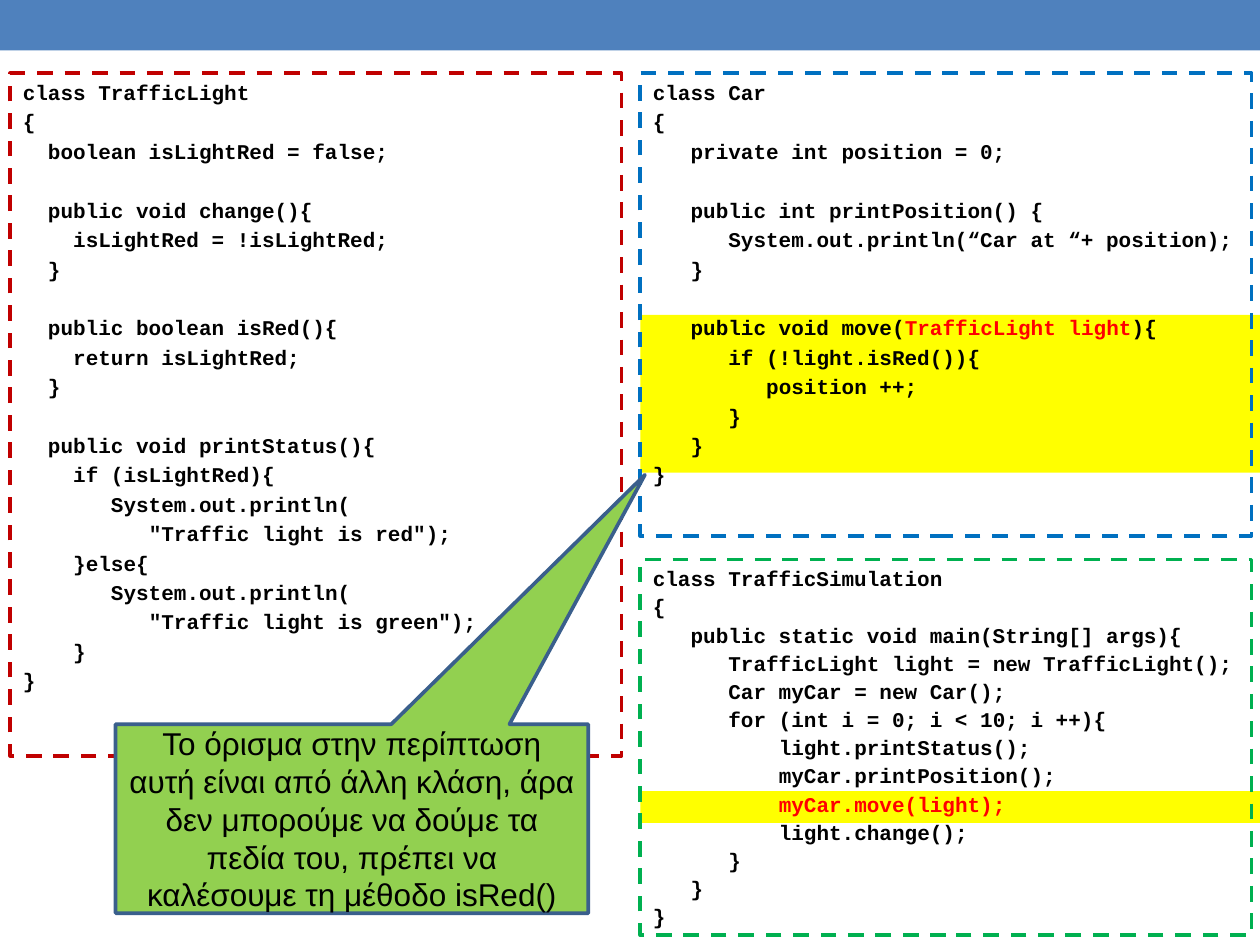
from dataclasses import dataclass

from pptx import Presentation
from pptx.dml.color import RGBColor as Rgb
from pptx.enum.dml import MSO_LINE_DASH_STYLE as Dash
from pptx.enum.shapes import MSO_SHAPE as Form
from pptx.enum.text import MSO_ANCHOR as Anchor, PP_ALIGN as Align
from pptx.util import Cm, Pt

HUES = {
    "bar": "4F81BD", "mark": "FFFF00", "text": "000000", "hot": "FF0000",
    "light": "C00000", "car": "0070C0", "main": "00B050",
    "note": "92D050", "edge": "3A5F8C",
}
STEP = Cm(0.254)  # width of one code letter
LINE = 14.4  # points of one code line without its gap
LEFT, RIGHT, TOP, WIDE = 0.21, 12.91, 1.48, 12.32


@dataclass
class Box:
    x: float
    y: float
    w: float
    h: float
    fill: str = ""
    line: str = ""
    pen: float = 2.25


@dataclass
class Code:
    box: Box
    text: str  # hot words stand between bars
    gap: float = 2.4  # points before each line


def hue(name: str) -> Rgb:
    return Rgb.from_string(HUES[name])


def draw(slide, box: Box, form=Form.RECTANGLE):
    shape = slide.shapes.add_shape(
        form, Cm(box.x), Cm(box.y), Cm(box.w), Cm(box.h))
    shape.shadow.inherit = False
    if box.fill:
        shape.fill.solid()
        shape.fill.fore_color.rgb = hue(box.fill)
    else:
        shape.fill.background()
    if box.line:
        shape.line.color.rgb = hue(box.line)
        shape.line.width = Pt(box.pen)
    else:
        shape.line.fill.background()
    return shape


def add_run(para, text: str, face: str, size: int, color: str, bold=False):
    run = para.add_run()
    run.text = text
    font = run.font
    font.name, font.size, font.bold = face, Pt(size), bold
    font.color.rgb = hue(color)


def draw_code(slide, code: Code):
    shape = draw(slide, code.box)
    shape.line.dash_style = Dash.DASH
    frame = shape.text_frame
    frame.word_wrap = True
    frame.vertical_anchor = Anchor.TOP
    para, space = None, code.gap
    for line in code.text.strip().splitlines():
        if not line:
            space += LINE + code.gap  # an empty line becomes space
            continue
        para = frame.add_paragraph() if para else frame.paragraphs[0]
        para.alignment = Align.LEFT
        para.space_before = Pt(space)
        space = code.gap
        body = line.lstrip()
        props = para._p.get_or_add_pPr()
        props.set("marL", str((len(line) - len(body)) * STEP))
        props.set("indent", "0")
        for i, part in enumerate(body.split("|")):
            if part:
                add_run(para, part, "Courier New", 12,
                        "hot" if i % 2 else "text", True)


CODES = [
    Code(Box(RIGHT, TOP, WIDE, 9.32, line="car"), """
class Car
{
   private int position = 0;

   public int printPosition() {
      System.out.println(“Car at “+ position);
   }

   public void move(|TrafficLight light|){
      if (!light.isRed()){
         position ++;
      }
   }
}
"""),
    Code(Box(LEFT, TOP, WIDE, 13.76, line="light"), """
class TrafficLight
{
  boolean isLightRed = false;

  public void change(){
    isLightRed = !isLightRed;
  }

  public boolean isRed(){
    return isLightRed;
  }

  public void printStatus(){
    if (isLightRed){
       System.out.println(
          "Traffic light is red");
    }else{
       System.out.println(
          "Traffic light is green");
    }
}
"""),
    Code(Box(RIGHT, 11.28, WIDE, 7.57, line="main"), """
class TrafficSimulation
{
   public static void main(String[] args){
      TrafficLight light = new TrafficLight();
      Car myCar = new Car();
      for (int i = 0; i < 10; i ++){
          light.printStatus();
          myCar.printPosition();
          |myCar.move(light);|
          light.change();
      }
   }
}
""", gap=1.7),
]
NOTE = ("Το όρισμα στην περίπτωση αυτή είναι από άλλη κλάση, άρα δεν μπορούμε "
        "να δούμε τα πεδία του, πρέπει να καλέσουμε τη μέθοδο isRed()")


def main():
    deck = Presentation()
    deck.slide_width, deck.slide_height = Cm(25.4), Cm(19.05)
    slide = deck.slides.add_slide(deck.slide_layouts[6])

    # Top bar and the marks behind the code
    draw(slide, Box(0, 0, 25.4, 1.02, "bar"))
    for y, h in ((15.95, 0.64), (6.35, 3.18)):
        draw(slide, Box(RIGHT, y, 25.4 - RIGHT, h, "mark"))

    # Code boxes
    for code in CODES:
        draw_code(slide, code)

    # Callout
    note = draw(slide, Box(2.33, 14.6, 9.53, 3.81, "note", "edge", 2.08),
                Form.RECTANGULAR_CALLOUT)
    note.adjustments[0], note.adjustments[1] = 0.62, -1.82
    frame = note.text_frame
    frame.word_wrap = True
    frame.vertical_anchor = Anchor.MIDDLE
    para = frame.paragraphs[0]
    para.alignment = Align.CENTER
    add_run(para, NOTE, "Arial", 18, "text")

    deck.save("out.pptx")


if __name__ == "__main__":
    main()
